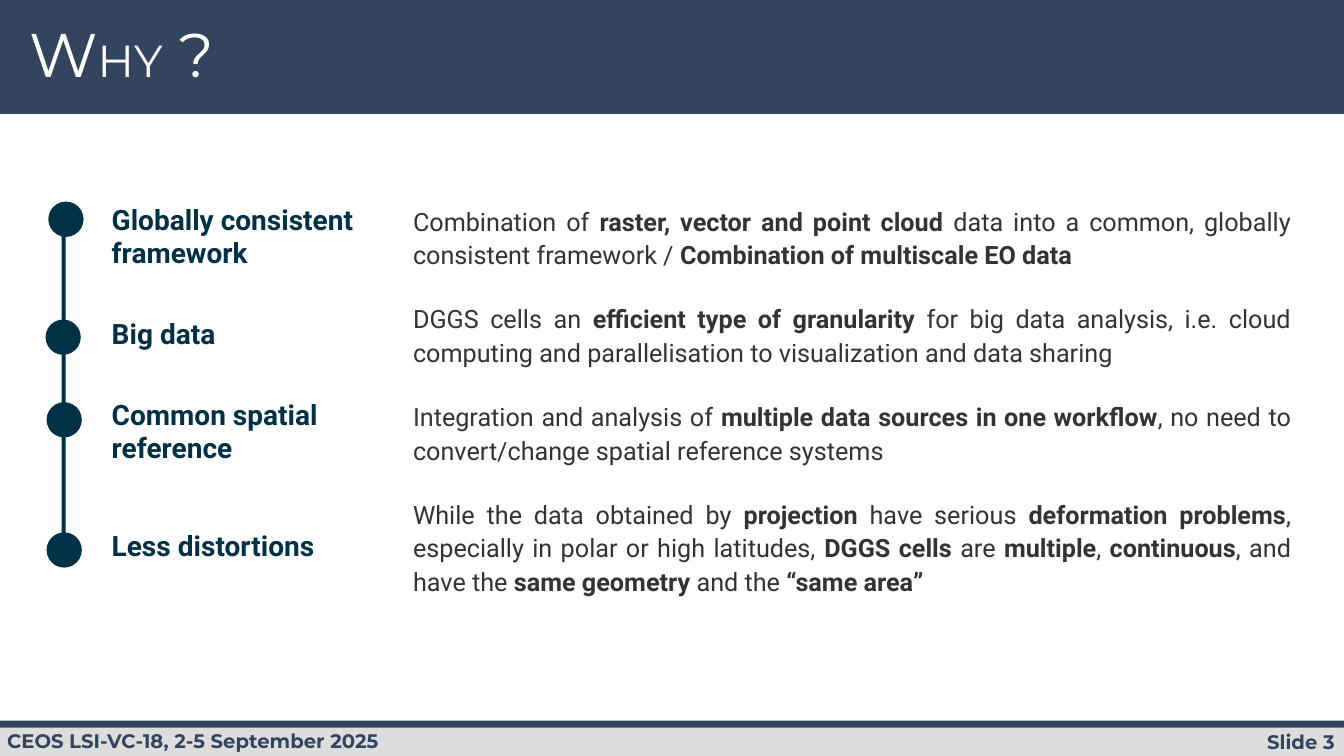
from dataclasses import dataclass

from pptx import Presentation
from pptx.dml.color import RGBColor
from pptx.enum.shapes import MSO_SHAPE as Shape
from pptx.enum.text import MSO_ANCHOR as Anchor, MSO_AUTO_SIZE as AutoSize, PP_ALIGN as Align
from pptx.util import Pt


@dataclass(frozen=True)
class Theme:
    band: str = "33445F"
    footer: str = "DDDDDD"
    accent: str = "003147"
    body: str = "333333"
    light: str = "FFFFFF"
    heading_font: str = "Montserrat"
    body_font: str = "Roboto"
    title_size: float = 44
    small_caps_size: float = 32
    topic_size: float = 20
    body_size: float = 18
    footer_size: float = 14


class SlideBuilder:
    def __init__(self, slide, theme):
        self.slide = slide
        self.theme = theme

    def style(self, paragraph, font, size, color, bold=None):
        paragraph.font.name = font
        if size:
            paragraph.font.size = Pt(size)
        paragraph.font.color.rgb = RGBColor.from_string(color)
        paragraph.font.bold = bold

    def shape(self, kind, left, top, width, height, color):
        shape = self.slide.shapes.add_shape(kind, Pt(left), Pt(top), Pt(width), Pt(height))
        shape.shadow.inherit = False
        shape.fill.solid()
        shape.fill.fore_color.rgb = RGBColor.from_string(color)
        shape.line.fill.background()

    def footer_text(self, text, left, top, width, height, align):
        frame = self.slide.shapes.add_textbox(Pt(left), Pt(top), Pt(width), Pt(height)).text_frame
        frame.word_wrap = True
        paragraph = frame.paragraphs[0]
        paragraph.text = text
        paragraph.alignment = align
        theme = self.theme
        self.style(paragraph, theme.heading_font, theme.footer_size, theme.band, True)

    def title(self, parts, left, top, width, height):
        title = self.slide.shapes.title
        title.left, title.top, title.width, title.height = Pt(left), Pt(top), Pt(width), Pt(height)
        # Bring the title in front of the header band
        title.element.getparent().append(title.element)
        frame = title.text_frame
        frame.auto_size = AutoSize.NONE
        frame.vertical_anchor = Anchor.TOP
        paragraph = frame.paragraphs[0]
        paragraph.alignment = Align.LEFT
        paragraph.line_spacing = 0.9
        self.style(paragraph, self.theme.heading_font, None, self.theme.light)
        for text, size in parts:
            run = paragraph.add_run()
            run.text = text
            run.font.size = Pt(size)

    def cell(self, cell):
        cell.fill.solid()
        cell.fill.fore_color.rgb = RGBColor.from_string(self.theme.light)
        cell.margin_left = cell.margin_right = cell.margin_top = cell.margin_bottom = Pt(10.8)
        return cell.text_frame.paragraphs[0]

    def reasons_table(self, reasons, left, top, widths, row_height):
        theme = self.theme
        table = self.slide.shapes.add_table(
            len(reasons), len(widths), Pt(left), Pt(top),
            Pt(sum(widths)), Pt(row_height * len(reasons))).table
        table.first_row = table.horz_banding = False
        for column, width in zip(table.columns, widths):
            column.width = Pt(width)
        for row, (topic, explanation) in zip(table.rows, reasons):
            topic_cell, explanation_cell = row.cells
            heading = self.cell(topic_cell)
            topic_cell.vertical_anchor = Anchor.MIDDLE
            heading.text = topic
            self.style(heading, theme.body_font, theme.topic_size, theme.accent, True)

            detail = self.cell(explanation_cell)
            detail.alignment = Align.JUSTIFY
            detail.line_spacing = 1.14
            self.style(detail, theme.body_font, theme.body_size, theme.body)
            # Text between asterisks is bold
            for index, part in enumerate(explanation.split("*")):
                if part:
                    run = detail.add_run()
                    run.text = part
                    run.font.bold = index % 2 == 1


REASONS = [
    ("Globally consistent framework",
     "Combination of *raster, vector and point cloud *data into a common, globally "
     "consistent framework / *Combination of multiscale EO data *"),
    ("Big data",
     "DGGS cells an *efficient type of granularity *for big data analysis, i.e. cloud "
     "computing and parallelisation to visualization and data sharing"),
    ("Common spatial reference",
     "Integration and analysis of *multiple data sources in one workflow*, no need to "
     "convert/change spatial reference systems"),
    ("Less distortions",
     "While the data obtained by *projection* have serious *deformation problems*, "
     "especially in polar or high latitudes, *DGGS cells* are *multiple*, *continuous*, "
     "and have the *same geometry *and the *“same area”*"),
]
MILESTONES = [(34.5, 144), (32.5, 228.25), (33.25, 287.25), (33.25, 380.25)]
MILESTONE_SIZE = 25.2


def main():
    deck = Presentation()
    deck.slide_width, deck.slide_height = Pt(960), Pt(540)
    theme = Theme()
    builder = SlideBuilder(deck.slides.add_slide(deck.slide_layouts[5]), theme)

    # Header and footer
    builder.shape(Shape.RECTANGLE, 0, 0, 960, 81.4, theme.band)
    builder.shape(Shape.RECTANGLE, 0, 517.7, 960, 22.3, theme.footer)
    builder.shape(Shape.RECTANGLE, 0, 514.8, 960, 5, theme.band)
    builder.footer_text("Slide 3", 808.5, 517.7, 152, 24.5, Align.RIGHT)
    builder.footer_text("CEOS LSI-VC-18, 2-5 September 2025", -2, 517, 463, 24.5, Align.LEFT)
    builder.title([("W", theme.title_size), ("HY", theme.small_caps_size),
                   (" ?", theme.title_size)], 13.7, 13.7, 739.5, 61.2)

    # Timeline rail, reasons and milestones
    builder.shape(Shape.RECTANGLE, 44, 155.5, 3, 247, theme.accent)
    builder.reasons_table(REASONS, 69, 134.75, (215.25, 648.75), 29.5)
    for left, top in MILESTONES:
        builder.shape(Shape.OVAL, left, top, MILESTONE_SIZE, MILESTONE_SIZE, theme.accent)

    deck.save("out.pptx")


if __name__ == "__main__":
    main()
